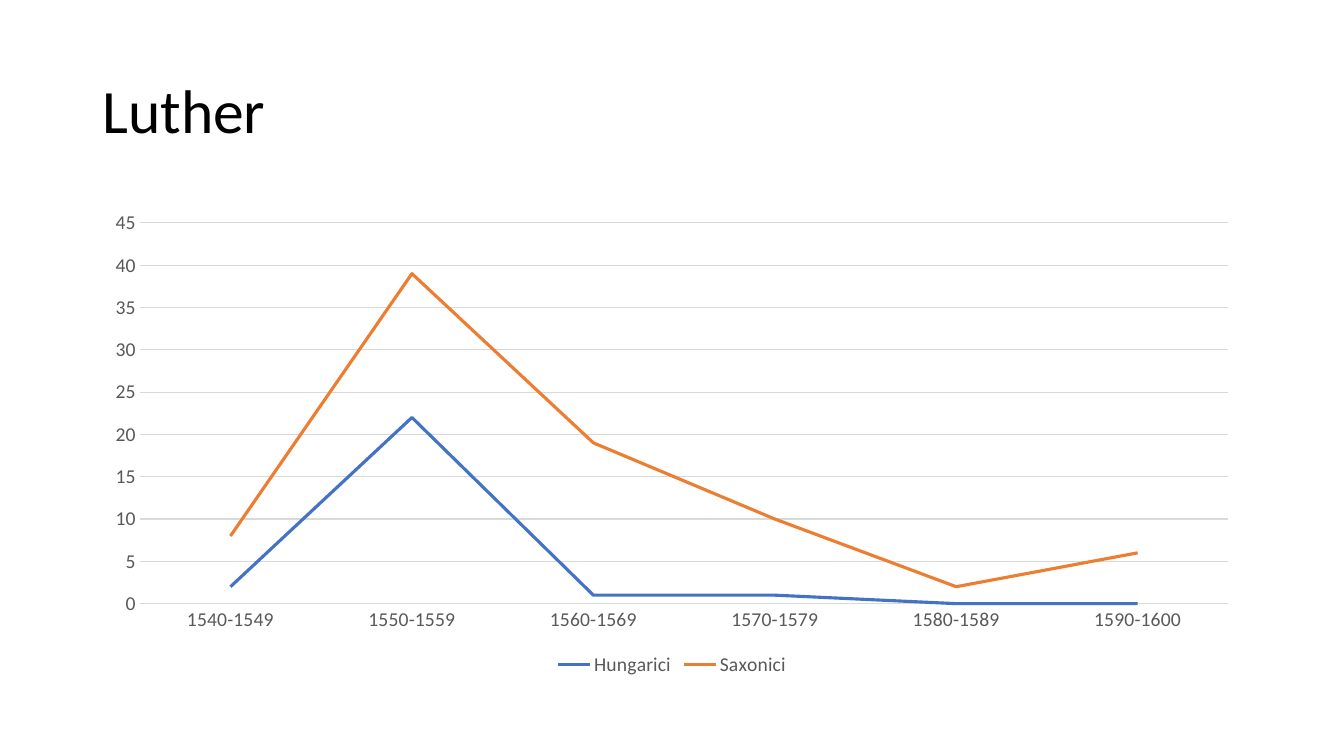
from dataclasses import dataclass

from pptx import Presentation
from pptx.chart.data import CategoryChartData
from pptx.dml.color import RGBColor
from pptx.enum.chart import XL_CHART_TYPE, XL_LEGEND_POSITION, XL_TICK_MARK
from pptx.enum.text import MSO_ANCHOR
from pptx.util import Pt

LINE_CHART = XL_CHART_TYPE.LINE
LEGEND_BOTTOM = XL_LEGEND_POSITION.BOTTOM
NO_TICK = XL_TICK_MARK.NONE
MIDDLE = MSO_ANCHOR.MIDDLE


@dataclass(frozen=True)
class Theme:
    font: str = "Calibri"
    title_size: Pt = Pt(44)
    chart_size: Pt = Pt(14)
    title: RGBColor = RGBColor(0x00, 0x00, 0x00)
    label: RGBColor = RGBColor(0x59, 0x59, 0x59)
    grid: RGBColor = RGBColor(0xD9, 0xD9, 0xD9)
    series: tuple = (RGBColor(0x44, 0x72, 0xC4), RGBColor(0xED, 0x7D, 0x31))


theme = Theme()
LEFT, WIDTH = Pt(66), Pt(828)


def style_font(font, size, color):
    font.name = theme.font
    font.size = size
    font.color.rgb = color


def style_line(line, color, width):
    line.color.rgb = color
    line.width = width


presentation = Presentation()
presentation.slide_width = Pt(960)
presentation.slide_height = Pt(540)
slide = presentation.slides.add_slide(presentation.slide_layouts[6])

# Title
title_box = slide.shapes.add_textbox(LEFT, Pt(28.75), WIDTH, Pt(104.38))
text_frame = title_box.text_frame
text_frame.word_wrap = True
text_frame.vertical_anchor = MIDDLE
paragraph = text_frame.paragraphs[0]
paragraph.line_spacing = 0.9
run = paragraph.add_run()
run.text = "Luther"
style_font(run.font, theme.title_size, theme.title)

# Chart data
chart_data = CategoryChartData()
chart_data.categories = [
    "1540-1549", "1550-1559", "1560-1569",
    "1570-1579", "1580-1589", "1590-1600",
]
chart_data.add_series("Hungarici", (2, 22, 1, 1, 0, 0))
chart_data.add_series("Saxonici", (8, 39, 19, 10, 2, 6))

# Line chart
chart = slide.shapes.add_chart(
    LINE_CHART, LEFT, Pt(143.75), WIDTH, Pt(342.63), chart_data
).chart
chart.has_title = False
style_font(chart.font, theme.chart_size, theme.label)
plot = chart.plots[0]
plot.vary_by_categories = False
for series, color in zip(plot.series, theme.series):
    series.smooth = False
    style_line(series.format.line, color, Pt(2.25))

# Axes and gridlines
category_axis, value_axis = chart.category_axis, chart.value_axis
for axis in (category_axis, value_axis):
    axis.major_tick_mark = NO_TICK
    axis.minor_tick_mark = NO_TICK
    style_font(axis.tick_labels.font, theme.chart_size, theme.label)
style_line(category_axis.format.line, theme.grid, Pt(0.75))
value_axis.minimum_scale = 0
value_axis.maximum_scale = 45
value_axis.major_unit = 5
value_axis.format.line.fill.background()
style_line(value_axis.major_gridlines.format.line, theme.grid, Pt(0.75))

# Legend
chart.has_legend = True
chart.legend.position = LEGEND_BOTTOM
chart.legend.include_in_layout = False
style_font(chart.legend.font, theme.chart_size, theme.label)

presentation.save("out.pptx")
